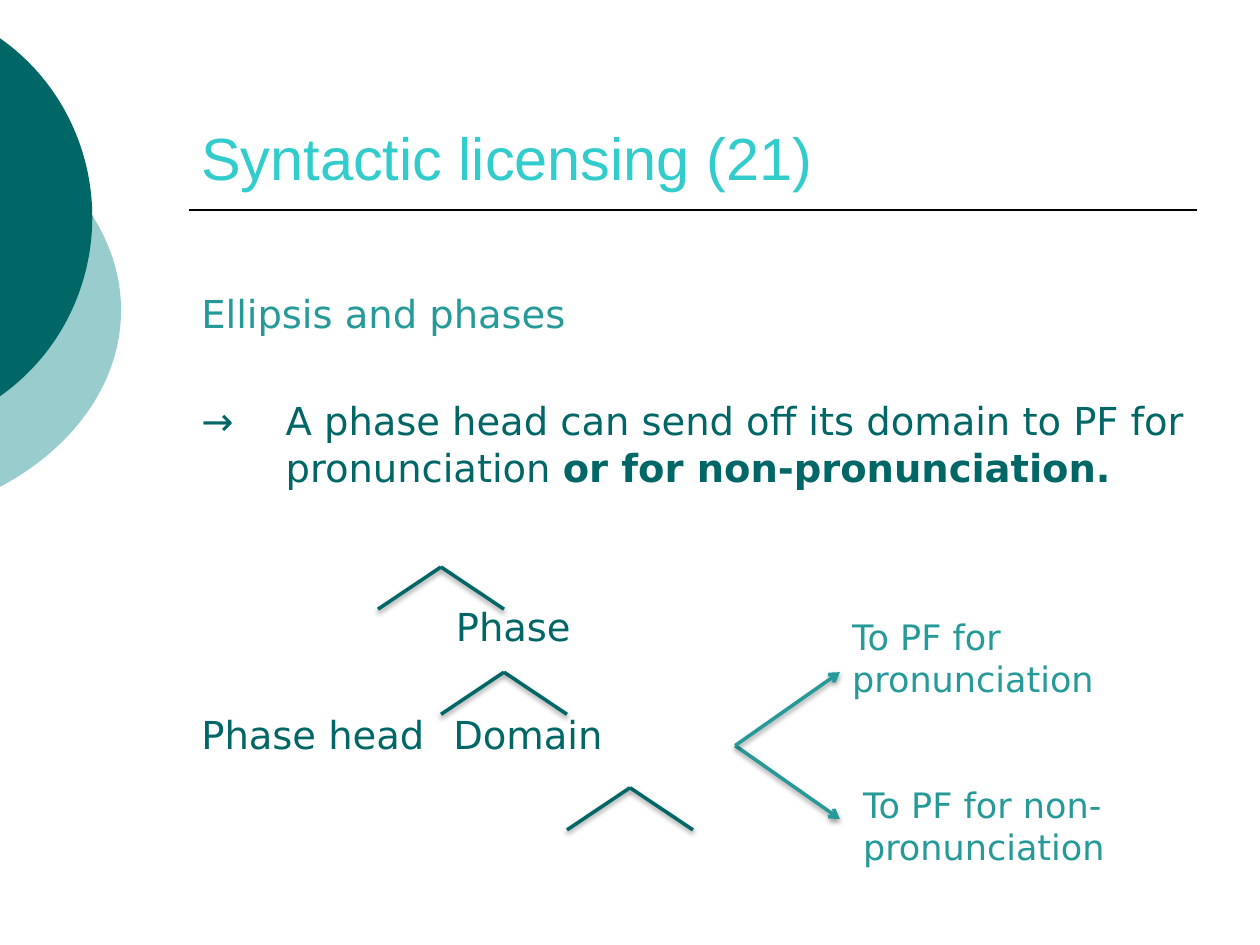
from lxml import etree
from pptx import Presentation
from pptx import util as u
from pptx.dml.color import RGBColor
from pptx.enum import shapes, text
from pptx.oxml import parse_xml
from pptx.oxml.ns import nsdecls, qn

COLORS = {"title": "33CCCC", "accent": "269999", "dark": "006666",
          "pale": "99CCCC", "rule": "000000"}
SHADOW = (f'<a:effectLst {nsdecls("a")}><a:outerShdw blurRad="39000" dist="20000" '
          'dir="5400000" rotWithShape="0"><a:srgbClr val="000000">'
          '<a:alpha val="38000"/></a:srgbClr></a:outerShdw></a:effectLst>')
NO_SHADOW = f'<a:effectLst {nsdecls("a")}/>'

prs = Presentation()
prs.slide_width, prs.slide_height = u.Cm(25.4), u.Cm(19.05)
slide = prs.slides.add_slide(prs.slide_layouts[6])


def add_text(left, top, width, height, paragraphs, size, color, font="DejaVu Sans"):
    """Add a text box; each paragraph is a list of (wording, bold, colour) runs."""
    frame = slide.shapes.add_textbox(u.Cm(left), u.Cm(top), u.Cm(width), u.Cm(height)).text_frame
    frame.word_wrap = True
    for number, runs in enumerate(paragraphs):
        paragraph = frame.add_paragraph() if number else frame.paragraphs[0]
        for wording, bold, run_color in runs:
            run = paragraph.add_run()
            run.text = wording
            run.font.name, run.font.size, run.font.bold = font, u.Pt(size), bold
            run.font.color.rgb = RGBColor.from_string(COLORS[run_color or color])
    return frame


def add_line(start, end, color, width, effect=SHADOW, arrow=False):
    line = slide.shapes.add_connector(shapes.MSO_CONNECTOR.STRAIGHT,
                                      *(u.Cm(c) for c in (*start, *end)))
    line.line.color.rgb = RGBColor.from_string(COLORS[color])
    line.line.width = u.Pt(width)
    if arrow:
        etree.SubElement(line.line._get_or_add_ln(), qn("a:tailEnd"), type="arrow")
    line._element.spPr.append(parse_xml(effect))


# Two discs that run over the left edge
for left, top, width, height, color in ((-8.99, 1.91, 11.43, 8.69, "pale"),
                                        (-6.73, 0, 8.59, 8.76, "dark")):
    disc = slide.shapes.add_shape(shapes.MSO_SHAPE.OVAL, u.Cm(left), u.Cm(top),
                                  u.Cm(width), u.Cm(height))
    disc.shadow.inherit = False
    disc.fill.solid()
    disc.fill.fore_color.rgb = RGBColor.from_string(COLORS[color])
    disc.line.fill.background()

add_line((3.81, 4.24), (24.13, 4.24), "rule", 1, NO_SHADOW)
title = add_text(3.81, 0.82, 20.32, 3.18, [[("Syntactic licensing (21)", False, None)]],
                 34, "title", "Arial")
title.vertical_anchor = text.MSO_ANCHOR.BOTTOM

# Claim, followed by the node labels of the phase tree
body = add_text(3.81, 5.72, 20.32, 11.86, [
    [("Ellipsis and phases", False, "accent")],
    [("→\tA phase head can send off its domain to PF for pronunciation ", False, None),
     ("or for non-pronunciation.", True, None)],
    [("Phase", False, None)],
    [("Phase head\tDomain", False, None)]], 22, "dark")
for paragraph, margin, indent, before in zip(body.paragraphs, (1.7, 1.7, 5.13, 0),
                                             (-1.7, -1.7, 0, 0), (0, 35, 65, 35)):
    paragraph.space_before = u.Pt(before)
    properties = paragraph._p.get_or_add_pPr()
    properties.set("marL", str(u.Cm(margin)))
    properties.set("indent", str(u.Cm(indent)))
tab_stops = etree.SubElement(properties, qn("a:tabLst"))
etree.SubElement(tab_stops, qn("a:tab"), pos=str(u.Cm(6.96)), algn="l")

# A pair of branches below each apex
for apex_x, apex_y in ((10.16, 13.55), (12.7, 15.88), (8.89, 11.43)):
    for offset in (1.27, -1.27):
        add_line((apex_x, apex_y), (apex_x + offset, apex_y + 0.85), "dark", 2)

# The two outcomes of sending off the domain
for outcome, left, top, arrow_y in (("To PF for non- pronunciation", 17.15, 15.67, 16.51),
                                    ("To PF for pronunciation", 16.93, 12.28, 13.55)):
    add_line((14.82, 15.03), (16.93, arrow_y), "accent", 2, arrow=True)
    add_text(left, top, 5.5, 1.96, [[(outcome, False, None)]], 20, "accent")

prs.save("out.pptx")
